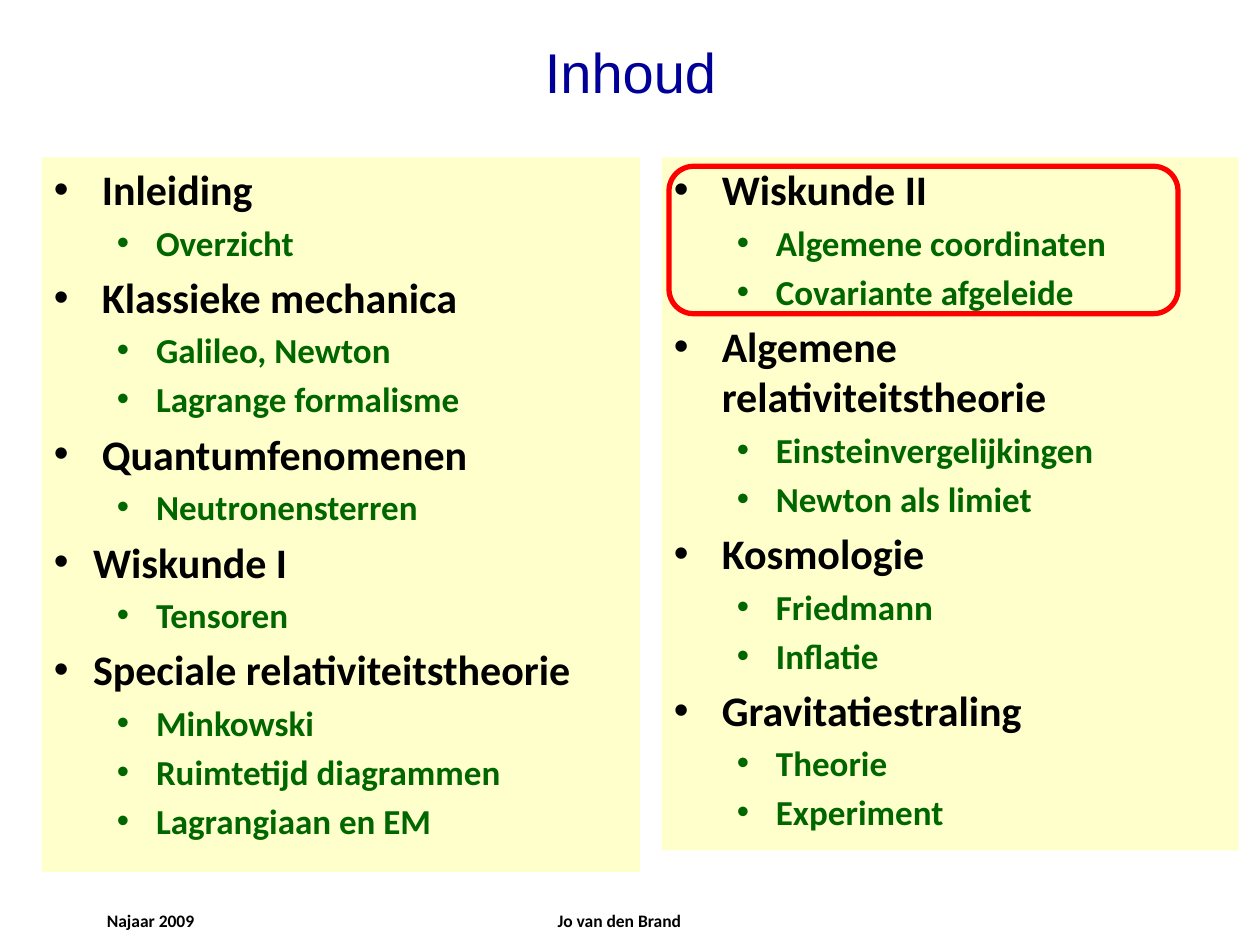
"""Build the contents slide with two lists and a marked topic."""
import pptx
import pptx.dml.color
import pptx.enum.shapes
import pptx.enum.text
import pptx.util
from lxml import etree

Inches, Pt = pptx.util.Inches, pptx.util.Pt
RGB = pptx.dml.color.RGBColor
ALIGN = pptx.enum.text.PP_ALIGN
SHAPE = pptx.enum.shapes.MSO_SHAPE

BLACK = RGB(0, 0, 0)
NAVY = RGB(0, 0, 0x99)
GREEN = RGB(0, 0x66, 0)
CREAM = RGB(0xFF, 0xFF, 0xCC)
RED = RGB(0xFF, 0, 0)

TOP = dict(name="Calibri", size=Pt(24), bold=True)
SUB = dict(name="Calibri", size=Pt(20), bold=True)
FOOT = dict(name="Calibri", size=Pt(10), bold=True)
HEAD = dict(name="Arial", size=Pt(32), bold=False)
WIDE, SLIM, DEEP = (0.38, 0.38), (0.31, 0.31), (0.81, 0.31)

LABELS = [
    ("Najaar 2009", (0.75, 7.17, 2.08, 0.33), ALIGN.LEFT, FOOT, BLACK, True),
    ("Jo van den Brand", (3.33, 7.17, 3.17, 0.33), ALIGN.CENTER, FOOT, BLACK, True),
    ("Inhoud", (4.2, 0.25, 1.61, 0.64), ALIGN.CENTER, HEAD, NAVY, False),
]
PANELS = [
    ((0.33, 1.25, 4.75, 5.67), [
        ("Inleiding", WIDE, ["Overzicht"]),
        ("Klassieke mechanica", WIDE, ["Galileo, Newton", "Lagrange formalisme"]),
        ("Quantumfenomenen", WIDE, ["Neutronensterren"]),
        ("Wiskunde I", SLIM, ["Tensoren"]),
        ("Speciale relativiteitstheorie", SLIM,
         ["Minkowski", "Ruimtetijd diagrammen", "Lagrangiaan en EM"]),
    ]),
    ((5.25, 1.25, 4.58, 5.5), [
        ("Wiskunde II", WIDE, ["Algemene coordinaten", "Covariante afgeleide"]),
        ("Algemene relativiteitstheorie", WIDE,
         ["Einsteinvergelijkingen", "Newton als limiet"]),
        ("Kosmologie", WIDE, ["Friedmann", "Inflatie"]),
        ("Gravitatiestraling", WIDE, ["Theorie", "Experiment"]),
    ]),
]
MARK = (5.31, 1.32, 4.04, 1.17)


def style(font, form, color):
    for key, value in form.items():
        setattr(font, key, value)
    font.color.rgb = color


def shape(slide, kind, box):
    item = slide.shapes.add_shape(kind, *map(Inches, box))
    item.shadow.inherit = False
    return item


def label(slide, text, box, align, form, color, wrap):
    frame = slide.shapes.add_textbox(*map(Inches, box)).text_frame
    frame.word_wrap = wrap
    para = frame.paragraphs[0]
    para.alignment = align
    run = para.add_run()
    run.text = text
    style(run.font, form, color)


def bullet(para, indent):
    props = para._p.get_or_add_pPr()
    left, hang = indent
    props.set("marL", str(Inches(left)))
    props.set("indent", str(-Inches(hang)))
    space = pptx.oxml.ns.qn("a:buFont")
    etree.SubElement(props, space, typeface="Arial")
    etree.SubElement(props, pptx.oxml.ns.qn("a:buChar"), char="•")


def panel(slide, box, topics):
    item = shape(slide, SHAPE.RECTANGLE, box)
    item.fill.solid()
    item.fill.fore_color.rgb = CREAM
    item.line.fill.background()
    frame = item.text_frame
    frame.word_wrap = True
    frame.vertical_anchor = pptx.enum.text.MSO_ANCHOR.TOP
    rows = []
    for topic, indent, parts in topics:
        rows.append((topic, 0, indent, TOP, BLACK))
        rows += [(part, 1, DEEP, SUB, GREEN) for part in parts]
    for spot, (text, level, indent, form, color) in enumerate(rows):
        para = frame.add_paragraph() if spot else frame.paragraphs[0]
        bullet(para, indent)
        para.level = level
        para.alignment = ALIGN.LEFT
        para.space_before = int(form["size"] * 0.2) if spot else Pt(0)
        run = para.add_run()
        run.text = text
        style(run.font, form, color)


def main():
    deck = pptx.Presentation()
    deck.slide_width, deck.slide_height = Inches(10), Inches(7.5)
    slide = deck.slides.add_slide(deck.slide_layouts[6])
    for row in LABELS:
        label(slide, *row)
    for box, topics in PANELS:
        panel(slide, box, topics)
    mark = shape(slide, SHAPE.ROUNDED_RECTANGLE, MARK)
    mark.fill.background()
    mark.line.color.rgb = RED
    mark.line.width = Pt(3)
    deck.save("out.pptx")


if __name__ == "__main__":
    main()
